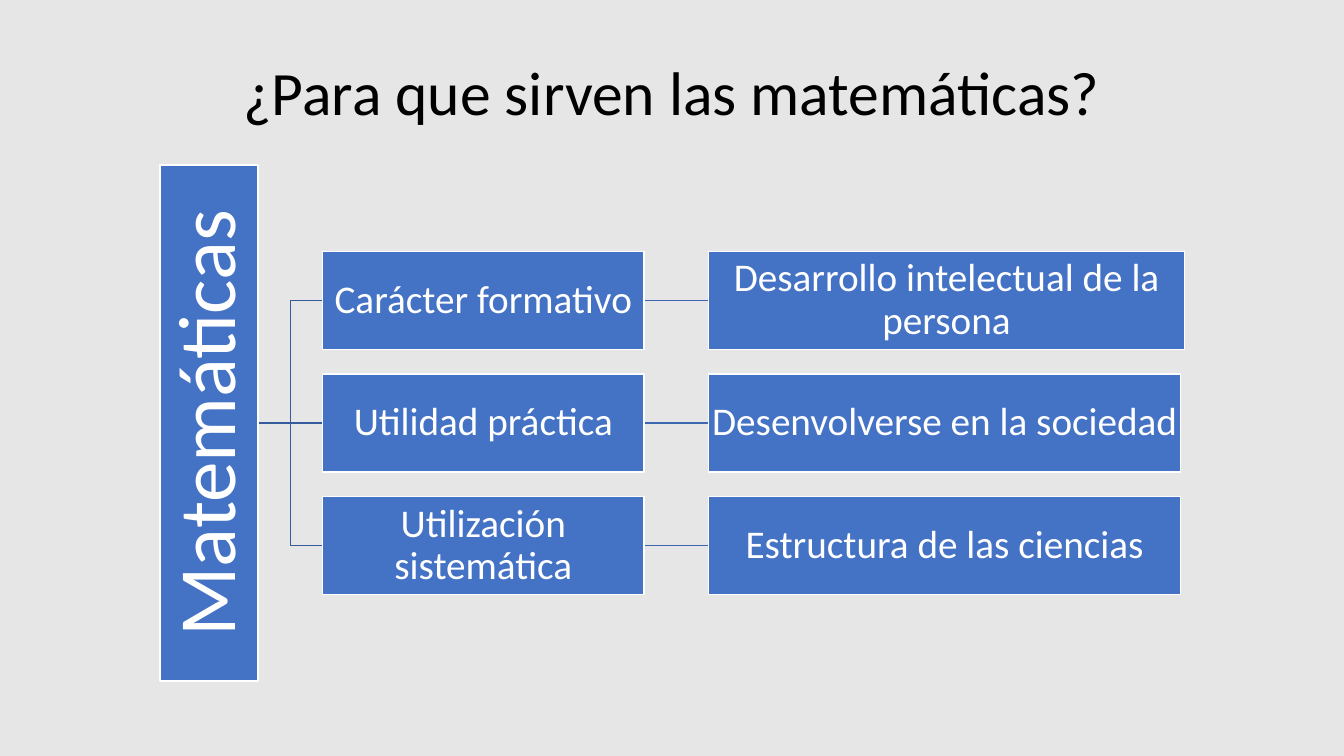
from dataclasses import dataclass

from lxml import etree
from pptx import Presentation
from pptx.dml.color import RGBColor
from pptx.enum.shapes import MSO_CONNECTOR, MSO_SHAPE
from pptx.enum.text import MSO_ANCHOR, PP_ALIGN
from pptx.oxml.ns import qn
from pptx.util import Cm, Pt

RECTANGLE = MSO_SHAPE.RECTANGLE
STRAIGHT, ELBOW = MSO_CONNECTOR.STRAIGHT, MSO_CONNECTOR.ELBOW
MIDDLE, CENTER = MSO_ANCHOR.MIDDLE, PP_ALIGN.CENTER


@dataclass(frozen=True)
class Theme:
    """Colours, font and type sizes of the slide."""
    background: RGBColor = RGBColor(0xE7, 0xE6, 0xE6)
    title: RGBColor = RGBColor(0, 0, 0)
    box: RGBColor = RGBColor(0x44, 0x72, 0xC4)
    light: RGBColor = RGBColor(0xFF, 0xFF, 0xFF)
    first_link: RGBColor = RGBColor(0x36, 0x5B, 0x9D)
    second_link: RGBColor = RGBColor(0x3E, 0x67, 0xB2)
    font: str = "Calibri"
    title_size: int = 44
    root_size: int = 58
    branch_size: int = 28
    line_width: int = 1


THEME = Theme()
TITLE = "¿Para que sirven las matemáticas?"
ROOT = "Matemáticas"
BRANCHES = [
    ("Carácter formativo", "Desarrollo intelectual de la persona", 11.99),
    ("Utilidad práctica", "Desenvolverse en la sociedad", 11.89),
    ("Utilización sistemática", "Estructura de las ciencias", 11.89),
]
BOX_HEIGHT, ROW_PITCH, LEVEL_GAP = 2.47, 3.09, 1.63
PURPOSE_WIDTH = 8.1


def write(shape, text, size, color, margin):
    """Set centred text with its type and equal margins in a shape."""
    frame = shape.text_frame
    frame.text = text
    frame.word_wrap = True
    frame.vertical_anchor = MIDDLE
    frame.margin_left = frame.margin_right = Cm(margin)
    frame.margin_top = frame.margin_bottom = Cm(margin)
    paragraph = frame.paragraphs[0]
    paragraph.alignment = CENTER
    paragraph.line_spacing = 0.9
    font = paragraph.runs[0].font
    font.name, font.size, font.color.rgb = THEME.font, Pt(size), color


def add_box(slide, left, middle, width, height, text, size, margin=0.05):
    """Add a filled box whose vertical centre is at middle."""
    box = slide.shapes.add_shape(
        RECTANGLE, Cm(left), Cm(middle - height / 2), Cm(width), Cm(height))
    box.shadow.inherit = False
    box.fill.solid()
    box.fill.fore_color.rgb = THEME.box
    box.line.color.rgb = THEME.light
    box.line.width = Pt(THEME.line_width)
    write(box, text, size, THEME.light, margin)
    return box


def add_link(slide, left, start, end, color):
    """Join two levels across the gap, with a bend if heights differ."""
    kind = STRAIGHT if start == end else ELBOW
    link = slide.shapes.add_connector(
        kind, Cm(left), Cm(start), Cm(left + LEVEL_GAP), Cm(end))
    link.line.color.rgb = color
    link.line.width = Pt(THEME.line_width)
    etree.SubElement(link._element.spPr, qn("a:effectLst"))


def add_title(slide, left, top, width, height):
    """Place and format the slide title."""
    title = slide.shapes.title
    title.left, title.top = Cm(left), Cm(top)
    title.width, title.height = Cm(width), Cm(height)
    write(title, TITLE, THEME.title_size, THEME.title, 0.2)


def add_hierarchy(slide, left, top, height):
    """Draw the root and its three branches in the given area."""
    center = top + height / 2
    root_right = left + BOX_HEIGHT
    purpose_left = root_right + LEVEL_GAP
    purpose_right = purpose_left + PURPOSE_WIDTH
    result_left = purpose_right + LEVEL_GAP
    middles = [center + (row - 1) * ROW_PITCH for row in range(len(BRANCHES))]

    for middle in middles:
        add_link(slide, root_right, center, middle, THEME.first_link)
        add_link(slide, purpose_right, middle, middle, THEME.second_link)

    root_left = left + (BOX_HEIGHT - height) / 2
    root = add_box(slide, root_left, center, height, BOX_HEIGHT,
                   ROOT, THEME.root_size, 0.1)
    root.rotation = 270

    for middle, (purpose, result, result_width) in zip(middles, BRANCHES):
        add_box(slide, purpose_left, middle, PURPOSE_WIDTH, BOX_HEIGHT,
                purpose, THEME.branch_size)
        add_box(slide, result_left, middle, result_width, BOX_HEIGHT,
                result, THEME.branch_size)


def main():
    """Build and save the slide."""
    deck = Presentation()
    deck.slide_width, deck.slide_height = Cm(33.87), Cm(19.05)
    slide = deck.slides.add_slide(deck.slide_layouts[5])
    slide.background.fill.solid()
    slide.background.fill.fore_color.rgb = THEME.background
    add_title(slide, 2.33, 1.01, 29.21, 2.82)
    add_hierarchy(slide, 4.03, 4.16, 13)
    deck.save("out.pptx")


if __name__ == "__main__":
    main()
